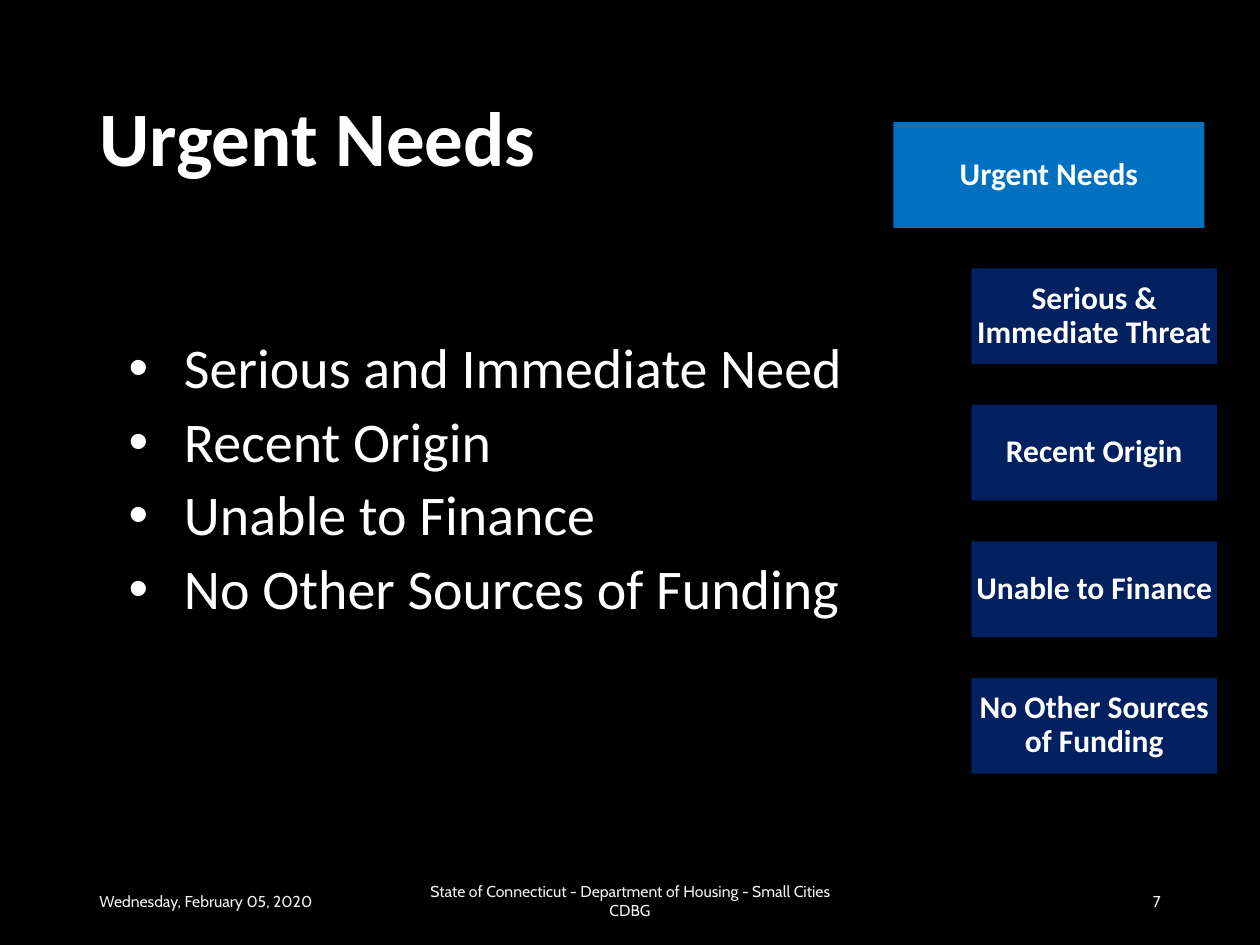
from lxml import etree
from pptx import Presentation
from pptx import util as u
from pptx.dml.color import RGBColor
from pptx.enum import shapes, text
from pptx.oxml.ns import qn

WHITE, FOOTER_GREY = "FFFFFF", "F2F2F2"
BRIGHT_BLUE, NAVY = "0070C0", "002060"
HEADING = "Urgent Needs"
NEEDS = ["Serious and Immediate Need", "Recent Origin",
         "Unable to Finance", "No Other Sources of Funding"]
CRITERIA = ["Serious & Immediate Threat"] + NEEDS[1:]
LEFT, CENTER, RIGHT = text.PP_ALIGN.LEFT, text.PP_ALIGN.CENTER, text.PP_ALIGN.RIGHT
FOOTERS = [
    (0.69, 2.25, "Wednesday, February 05, 2020", LEFT),
    (3.31, 3.38, "State of Connecticut - Department of Housing - Small Cities CDBG", CENTER),
    (7.06, 2.25, "7", RIGHT),
]


def paint(color_holder, hex_color):
    """Give a fill or a font one solid colour."""
    fill = getattr(color_holder, "fill", color_holder)
    fill.solid()
    fill.fore_color.rgb = RGBColor.from_string(hex_color)


def place(shape, left, top, width, height):
    shape.left, shape.top = u.Inches(left), u.Inches(top)
    shape.width, shape.height = u.Inches(width), u.Inches(height)


def write(paragraph, words, size, bold=False, font="Calibri", color=WHITE,
          align=LEFT, spacing=0.9):
    paragraph.alignment = align
    paragraph.line_spacing = spacing
    run = paragraph.add_run()
    run.text = words
    run.font.name, run.font.size, run.font.bold = font, u.Pt(size), bold
    paint(run.font, color)


def add_bullet(paragraph):
    properties = paragraph._p.get_or_add_pPr()
    indent = u.Inches(0.44)
    properties.set("marL", str(indent))
    properties.set("indent", str(-indent))
    etree.SubElement(properties, qn("a:buFont")).set("typeface", "Arial")
    etree.SubElement(properties, qn("a:buChar")).set("char", "•")


def set_title(title):
    place(title, 0.69, 0.4, 8.62, 1.45)
    title.text_frame.vertical_anchor = text.MSO_ANCHOR.MIDDLE
    write(title.text_frame.paragraphs[0], HEADING, 44, bold=True)


def set_needs(body):
    place(body, 0.92, 2, 8.39, 4.76)
    frame = body.text_frame
    frame.auto_size = text.MSO_AUTO_SIZE.NONE
    frame.vertical_anchor = text.MSO_ANCHOR.TOP
    frame.margin_top = u.Inches(0.7)
    for number, need in enumerate(NEEDS):
        paragraph = frame.add_paragraph() if number else frame.paragraphs[0]
        add_bullet(paragraph)
        paragraph.space_before = u.Pt(7.5 if number else 0)
        write(paragraph, need, 32)


def add_box(slide, left, top, width, height, words, color):
    box = slide.shapes.add_shape(shapes.MSO_SHAPE.RECTANGLE, 0, 0, 0, 0)
    place(box, left, top, width, height)
    box.shadow.inherit = False
    paint(box, color)
    box.line.fill.background()
    frame = box.text_frame
    frame.word_wrap = True
    frame.vertical_anchor = text.MSO_ANCHOR.MIDDLE
    frame.margin_left = frame.margin_right = u.Inches(0.01)
    frame.margin_top = frame.margin_bottom = u.Inches(0.01)
    write(frame.paragraphs[0], words, 18, bold=True, align=CENTER)


def add_footer(slide, left, width, words, align):
    footer = slide.shapes.add_textbox(0, 0, 0, 0)
    place(footer, left, 6.95, width, 0.4)
    frame = footer.text_frame
    frame.word_wrap = True
    frame.vertical_anchor = text.MSO_ANCHOR.MIDDLE
    write(frame.paragraphs[0], words, 9, font="Cabin", color=FOOTER_GREY,
          align=align, spacing=1.0)


def main():
    deck = Presentation()
    deck.slide_width, deck.slide_height = u.Inches(10), u.Inches(7.5)
    slide = deck.slides.add_slide(deck.slide_layouts[1])
    paint(slide.background, "000000")

    set_title(slide.shapes.title)
    set_needs(slide.placeholders[1])
    for footer in FOOTERS:
        add_footer(slide, *footer)

    add_box(slide, 7.09, 0.97, 2.47, 0.84, HEADING, BRIGHT_BLUE)
    first_top, last_top = 2.13, 5.38
    pitch = (last_top - first_top) / (len(CRITERIA) - 1)
    for row, criterion in enumerate(CRITERIA):
        add_box(slide, 7.71, first_top + row * pitch, 1.95, 0.76, criterion, NAVY)

    deck.save("out.pptx")


if __name__ == "__main__":
    main()
